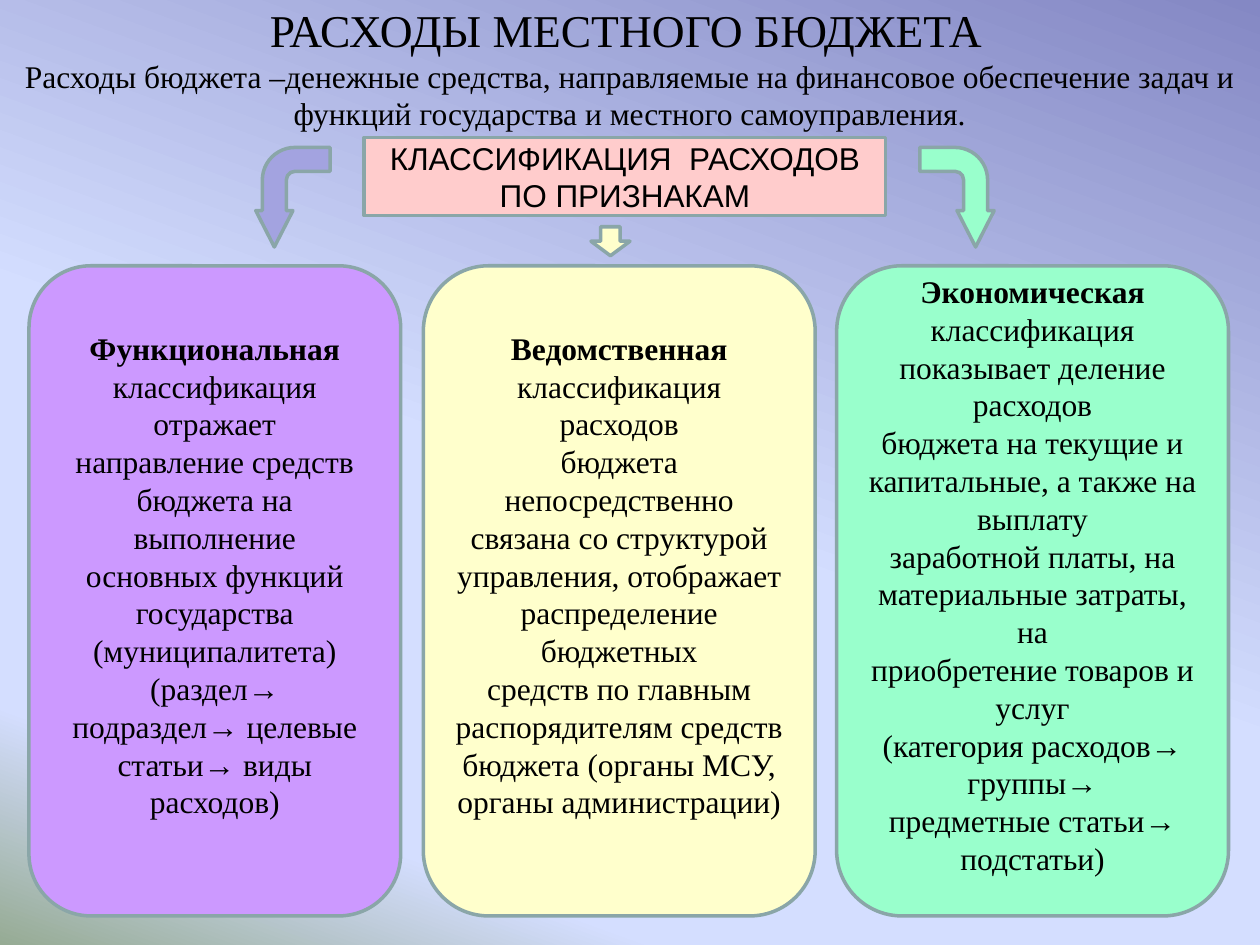
from pptx import Presentation
from pptx.dml.color import RGBColor
from pptx.enum.shapes import MSO_SHAPE as Shape
from pptx.enum.text import MSO_ANCHOR as Anchor, MSO_AUTO_SIZE as Fit, PP_ALIGN as Align
from pptx.oxml.ns import qn
from pptx.util import Inches, Pt
from lxml import etree

HEX = {
    "text": "000000", "line": "8AA6A8", "pink": "FFCCCC", "violet": "CC99FF",
    "cream": "FFFFCC", "mint": "99FFCC", "lilac": "A3A3E0",
}
SKY = [(0, "8488C4"), (53, "D4DEFF"), (83, "D4DEFF"), (100, "96AB94")]
SERIF, SANS = "Times New Roman", "Arial"
BEND = (0.322, 0.25, 0.489, 0.438)

# left, width, fill, bold heading, break after heading, body lines
CARDS = [
    (0.23, 2.95, "violet", "Функциональная", True, [
        "классификация отражает", "направление средств",
        "бюджета на выполнение", "основных функций", "государства",
        "(муниципалитета) (раздел→", "подраздел→ целевые",
        "статьи→ виды расходов)"]),
    (3.36, 3.11, "cream", "Ведомственная", True, [
        "классификация расходов", "бюджета непосредственно",
        "связана со структурой", "управления, отображает",
        "распределение бюджетных", "средств по главным",
        "распорядителям средств", "бюджета (органы МСУ,",
        "органы администрации)"]),
    (6.64, 3.11, "mint", "Экономическая ", False, [
        "классификация", "показывает деление расходов",
        "бюджета на текущие и", "капитальные, а также на выплату",
        "заработной платы, на", "материальные затраты, на",
        "приобретение товаров и услуг", "(категория расходов→ группы→",
        "предметные статьи→ подстатьи)"]),
]


class Deck:
    def __init__(self):
        self.prs = Presentation()
        self.prs.slide_width, self.prs.slide_height = Inches(10), Inches(7.5)
        self.slide = self.prs.slides.add_slide(self.prs.slide_layouts[5])

    def backdrop(self, stops, angle):
        """Fill the background with a gradient; the angle runs clockwise."""
        fill = self.slide.background.fill
        fill.gradient()
        fill.gradient_angle = 360 - angle
        box = self.slide.element.xpath(".//p:bg//a:gsLst")[0]
        for old in list(box):
            box.remove(old)
        for pos, tone in stops:
            stop = etree.SubElement(box, qn("a:gs"), pos=str(pos * 1000))
            etree.SubElement(stop, qn("a:srgbClr"), val=tone)

    def frame(self, shape):
        """Set up a wrapped, centred text frame and return its paragraph."""
        text = shape.text_frame
        text.word_wrap = True
        text.auto_size = Fit.NONE
        text.vertical_anchor = Anchor.MIDDLE
        para = text.paragraphs[0]
        para.alignment = Align.CENTER
        return para

    def run(self, para, words, size=18, face=SERIF, bold=False):
        run = para.add_run()
        run.text = words
        font = run.font
        font.name, font.size, font.bold = face, Pt(size), bold
        font.color.rgb = RGBColor.from_string(HEX["text"])

    def title(self, words, *at):
        shape = self.slide.shapes.title
        shape.left, shape.top, shape.width, shape.height = map(Inches, at)
        self.run(self.frame(shape), words, 26)

    def note(self, words, *at):
        shape = self.slide.shapes.add_textbox(*map(Inches, at))
        self.run(self.frame(shape), words)

    def block(self, kind, fill, *at):
        shape = self.slide.shapes.add_shape(kind, *map(Inches, at))
        shape.shadow.inherit = False
        shape.fill.solid()
        shape.fill.fore_color.rgb = RGBColor.from_string(HEX[fill])
        shape.line.color.rgb = RGBColor.from_string(HEX["line"])
        shape.line.width = Pt(2)
        return shape

    def label(self, words, fill, *at):
        shape = self.block(Shape.RECTANGLE, fill, *at)
        self.run(self.frame(shape), words, face=SANS)

    def card(self, left, width, fill, head, split, lines):
        shape = self.block(Shape.ROUNDED_RECTANGLE, fill, left, 2.11, width, 5.16)
        para = self.frame(shape)
        shape.text_frame.margin_bottom = Inches(0.31)
        self.run(para, head, bold=True)
        if split:
            para.add_line_break()
        for num, line in enumerate(lines):
            if num:
                para.add_line_break()
            self.run(para, line)

    def bend(self, fill, left, flip=False):
        shape = self.block(Shape.BENT_ARROW, fill, left, 1.27, 0.79, 0.59)
        for num, part in enumerate(BEND):
            shape.adjustments[num] = part
        shape.rotation = 90
        if flip:
            shape.element.spPr.find(qn("a:xfrm")).set("flipV", "1")


def main():
    deck = Deck()
    deck.backdrop(SKY, 110)
    deck.title("РАСХОДЫ МЕСТНОГО БЮДЖЕТА", 0.47, 0, 9, 0.47)
    deck.note("Расходы бюджета –денежные средства, направляемые на финансовое "
              "обеспечение задач и функций государства и местного самоуправления.",
              0, 0.47, 10, 0.56)
    deck.label("КЛАССИФИКАЦИЯ  РАСХОДОВ ПО ПРИЗНАКАМ", "pink", 2.89, 1.09, 4.14, 0.62)
    for card in CARDS:
        deck.card(*card)
    deck.bend("mint", 7.2)
    deck.bend("lilac", 1.93, flip=True)
    deck.block(Shape.DOWN_ARROW, "cream", 4.69, 1.8, 0.31, 0.23)
    deck.prs.save("out.pptx")


if __name__ == "__main__":
    main()
